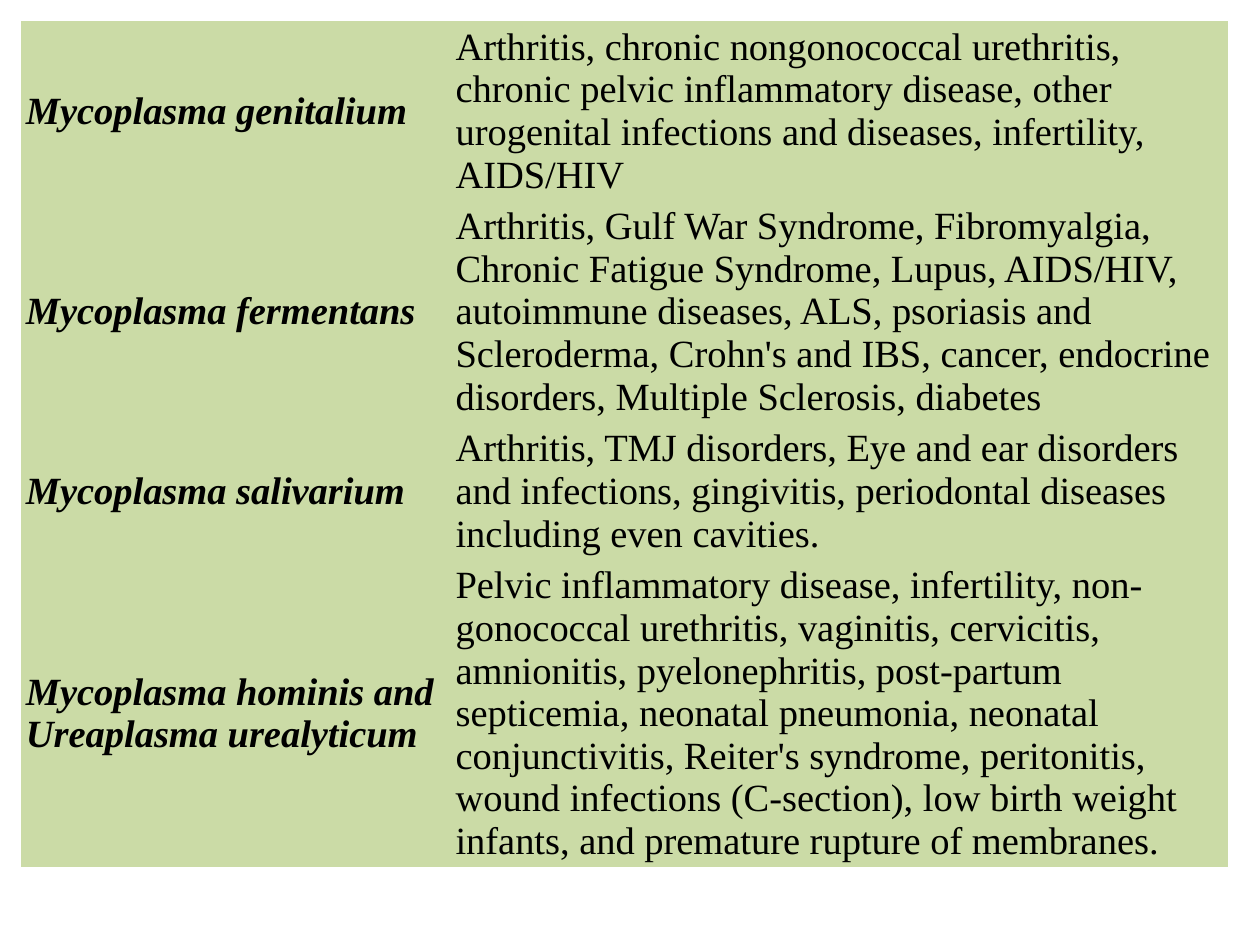
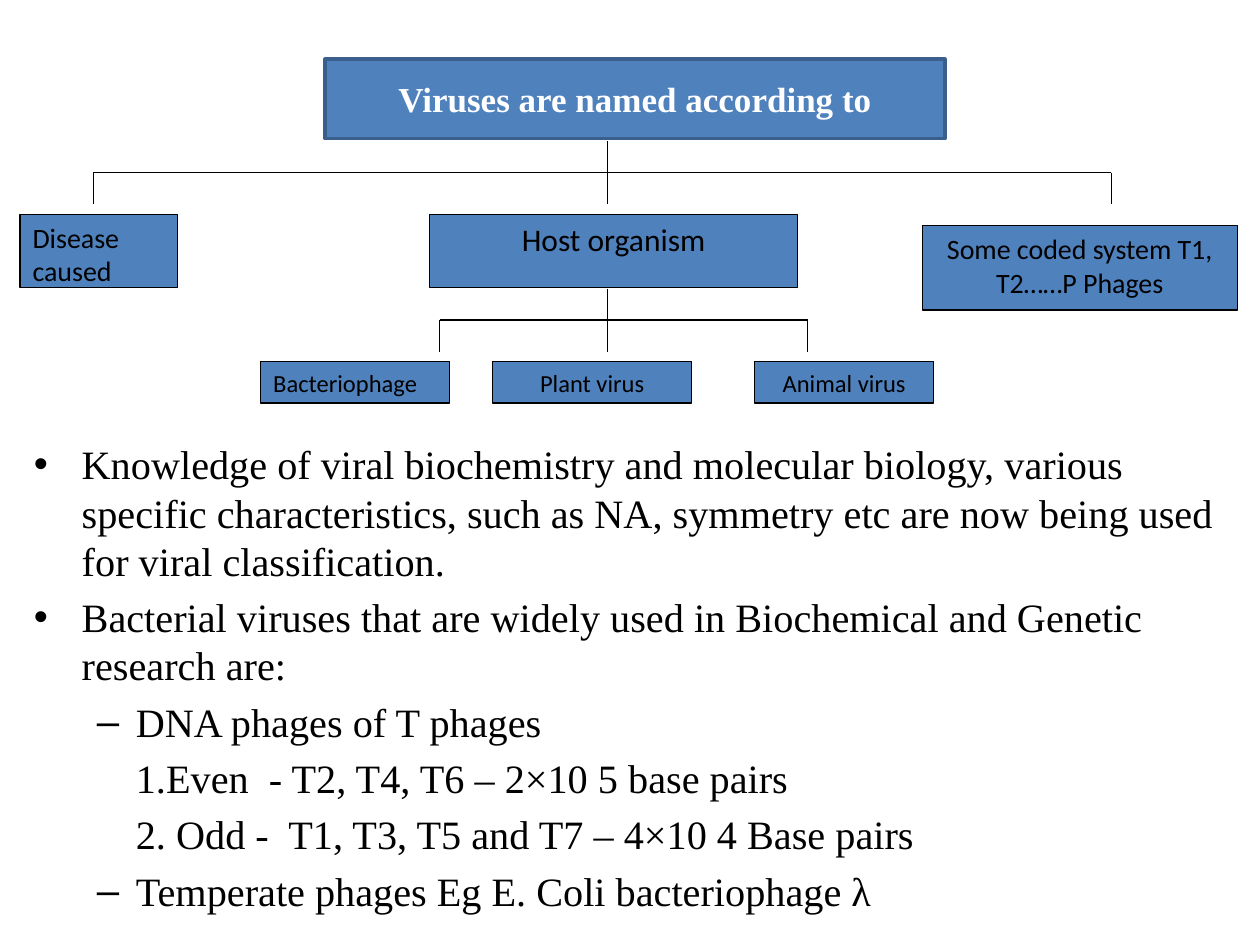
import pptx
import pptx.dml.color
import pptx.enum.shapes
import pptx.enum.text
import pptx.util
from dataclasses import dataclass
from lxml import etree

Inches = pptx.util.Inches
Pt = pptx.util.Pt
Align = pptx.enum.text.PP_ALIGN
Anchor = pptx.enum.text.MSO_ANCHOR
NO_GRID_STYLE = "{2D5ABB26-0587-4C30-8999-92F81FD0307C}"


@dataclass(frozen=True)
class Theme:
    serif: str = "Times New Roman"
    sans: str = "Calibri"
    black: str = "000000"
    white: str = "FFFFFF"
    box_blue: str = "4F81BD"
    heading_edge: str = "3A5F8C"
    table_green: str = "CBDBA6"
    table_size: float = 22
    body_size: float = 23
    heading_size: float = 20
    host_size: float = 18
    group_size: float = 16
    virus_size: float = 14
    thin: float = 0.75
    thick: float = 2
    cell_margin: float = 2.6


THEME = Theme()

DISEASES = [
    ("Mycoplasma genitalium",
     "Arthritis, chronic nongonococcal urethritis, chronic pelvic inflammatory disease, "
     "other urogenital infections and diseases, infertility, AIDS/HIV"),
    ("Mycoplasma fermentans",
     "Arthritis, Gulf War Syndrome, Fibromyalgia, Chronic Fatigue Syndrome, Lupus, "
     "AIDS/HIV, autoimmune diseases, ALS, psoriasis and Scleroderma, Crohn's and IBS, "
     "cancer, endocrine disorders, Multiple Sclerosis, diabetes"),
    ("Mycoplasma salivarium",
     "Arthritis, TMJ disorders, Eye and ear disorders and infections, gingivitis, "
     "periodontal diseases including even cavities."),
    ("Mycoplasma hominis and Ureaplasma urealyticum",
     "Pelvic inflammatory disease, infertility, non-gonococcal urethritis, vaginitis, "
     "cervicitis, amnionitis, pyelonephritis, post-partum septicemia, neonatal pneumonia, "
     "neonatal conjunctivitis, Reiter's syndrome, peritonitis, wound infections "
     "(C-section), low birth weight infants, and premature rupture of membranes."),
]
COLUMN_WIDTHS = (3.41, 6.17)
ROW_HEIGHTS = (1.04, 1.72, 0.91, 2.13)

# Bullet, left margin, hanging indent
TOP = ("•", 0.38, -0.38)
SUB = ("–", 0.81, -0.31)
PLAIN = (None, 0.81, 0)
NOTES = [
    (TOP, "Knowledge of viral biochemistry and molecular biology, various specific "
          "characteristics, such as NA, symmetry etc are now being used for viral "
          "classification."),
    (TOP, "Bacterial viruses that are widely used in Biochemical and Genetic research are:"),
    (SUB, "DNA phages of T phages"),
    (PLAIN, "1.Even  - T2, T4, T6 – 2×10 5 base pairs"),
    (PLAIN, "2. Odd -  T1, T3, T5 and T7 – 4×10 4 Base pairs"),
    (SUB, "Temperate phages Eg E. Coli bacteriophage λ"),
]


def rgb(value):
    return pptx.dml.color.RGBColor.from_string(value)


def style_text(paragraph, font_name, size, color=THEME.black, bold=False, italic=False):
    for run in paragraph.runs:
        run.font.name = font_name
        run.font.size = Pt(size)
        run.font.color.rgb = rgb(color)
        run.font.bold = bold
        run.font.italic = italic


def add_disease_table(slide):
    table = slide.shapes.add_table(
        len(DISEASES), len(COLUMN_WIDTHS), Inches(0.17), Inches(0.17),
        Inches(sum(COLUMN_WIDTHS)), Inches(sum(ROW_HEIGHTS))).table
    table.first_row = table.horz_banding = False
    table._tbl.tblPr.find(pptx.oxml.ns.qn("a:tableStyleId")).text = NO_GRID_STYLE
    for column, width in zip(table.columns, COLUMN_WIDTHS):
        column.width = Inches(width)
    for row, height, texts in zip(table.rows, ROW_HEIGHTS, DISEASES):
        row.height = Inches(height)
        for cell, text, is_species in zip(row.cells, texts, (True, False)):
            cell.text_frame.text = text
            cell.vertical_anchor = Anchor.MIDDLE
            cell.margin_left = cell.margin_right = Pt(THEME.cell_margin)
            cell.margin_top = cell.margin_bottom = Pt(THEME.cell_margin)
            cell.fill.solid()
            cell.fill.fore_color.rgb = rgb(THEME.table_green)
            style_text(cell.text_frame.paragraphs[0], THEME.serif, THEME.table_size,
                       bold=is_species, italic=is_species)


def add_box(slide, text, left, top, width, height, size, align=Align.CENTER):
    box = slide.shapes.add_shape(
        pptx.enum.shapes.MSO_SHAPE.RECTANGLE,
        Inches(left), Inches(top), Inches(width), Inches(height))
    box.shadow.inherit = False
    box.fill.solid()
    box.fill.fore_color.rgb = rgb(THEME.box_blue)
    box.line.color.rgb = rgb(THEME.black)
    box.line.width = Pt(THEME.thin)
    box.text_frame.text = text
    box.text_frame.vertical_anchor = Anchor.TOP
    paragraph = box.text_frame.paragraphs[0]
    paragraph.alignment = align
    style_text(paragraph, THEME.sans, size)
    return box


def add_heading(slide, text):
    heading = add_box(slide, text, 2.58, 0.47, 4.92, 0.63, THEME.heading_size)
    heading.line.color.rgb = rgb(THEME.heading_edge)
    heading.line.width = Pt(THEME.thick)
    heading.text_frame.vertical_anchor = Anchor.MIDDLE
    style_text(heading.text_frame.paragraphs[0], THEME.serif, THEME.heading_size,
               THEME.white, bold=True)


def add_line(slide, x1, y1, x2, y2):
    line = slide.shapes.add_connector(
        pptx.enum.shapes.MSO_CONNECTOR.STRAIGHT,
        Inches(x1), Inches(y1), Inches(x2), Inches(y2))
    line.line.color.rgb = rgb(THEME.black)
    line.line.width = Pt(THEME.thin)
    etree.SubElement(line._element.spPr, pptx.oxml.ns.qn("a:effectLst"))


def add_branches(slide, stem_x, top, branch_xs, step=0.25):
    """Draw a stem, a crossbar and one drop for each branch."""
    bar_y = top + step
    add_line(slide, stem_x, top, stem_x, bar_y)
    add_line(slide, branch_xs[0], bar_y, branch_xs[-1], bar_y)
    for x in branch_xs:
        add_line(slide, x, bar_y, x, bar_y + step)


def add_notes(slide):
    frame = slide.shapes.add_textbox(
        Inches(0.17), Inches(3.44), Inches(9.58), Inches(3.9)).text_frame
    frame.word_wrap = True
    frame.text = "\n".join(text for _, text in NOTES)
    for paragraph, ((bullet, margin, indent), _) in zip(frame.paragraphs, NOTES):
        paragraph.space_before = Pt(0.2 * THEME.body_size)
        style_text(paragraph, THEME.serif, THEME.body_size)
        properties = paragraph._p.get_or_add_pPr()
        properties.set("marL", str(Inches(margin)))
        properties.set("indent", str(Inches(indent)))
        if bullet:
            font = etree.SubElement(properties, pptx.oxml.ns.qn("a:buFont"))
            font.set("typeface", "Arial")
            mark = etree.SubElement(properties, pptx.oxml.ns.qn("a:buChar"))
            mark.set("char", bullet)
        else:
            etree.SubElement(properties, pptx.oxml.ns.qn("a:buNone"))


def add_naming_tree(slide):
    stem_x = 4.82
    add_box(slide, "Disease caused", 0.16, 1.7, 1.25, 0.58, THEME.group_size, Align.LEFT)
    add_box(slide, "Host organism", 3.41, 1.7, 2.92, 0.58, THEME.host_size)
    add_box(slide, "Some coded system T1, T2……P Phages", 7.32, 1.79, 2.5, 0.67,
            THEME.group_size)
    add_branches(slide, stem_x, 1.12, (0.74, stem_x, 8.82))
    add_branches(slide, stem_x, 2.29, (3.49, stem_x, 6.41))
    for virus, left, width, align in (
            ("Bacteriophage", 2.07, 1.5, Align.LEFT),
            ("Plant virus", 3.91, 1.58, Align.CENTER),
            ("Animal virus", 5.99, 1.42, Align.CENTER)):
        add_box(slide, virus, left, 2.87, width, 0.33, THEME.virus_size, align)
    add_heading(slide, "Viruses are named according to")


def main():
    deck = pptx.Presentation()
    deck.slide_width, deck.slide_height = Inches(10), Inches(7.5)
    blank = deck.slide_layouts[6]
    add_disease_table(deck.slides.add_slide(blank))
    virus_slide = deck.slides.add_slide(blank)
    add_notes(virus_slide)
    add_naming_tree(virus_slide)
    deck.save("out.pptx")


if __name__ == "__main__":
    main()
